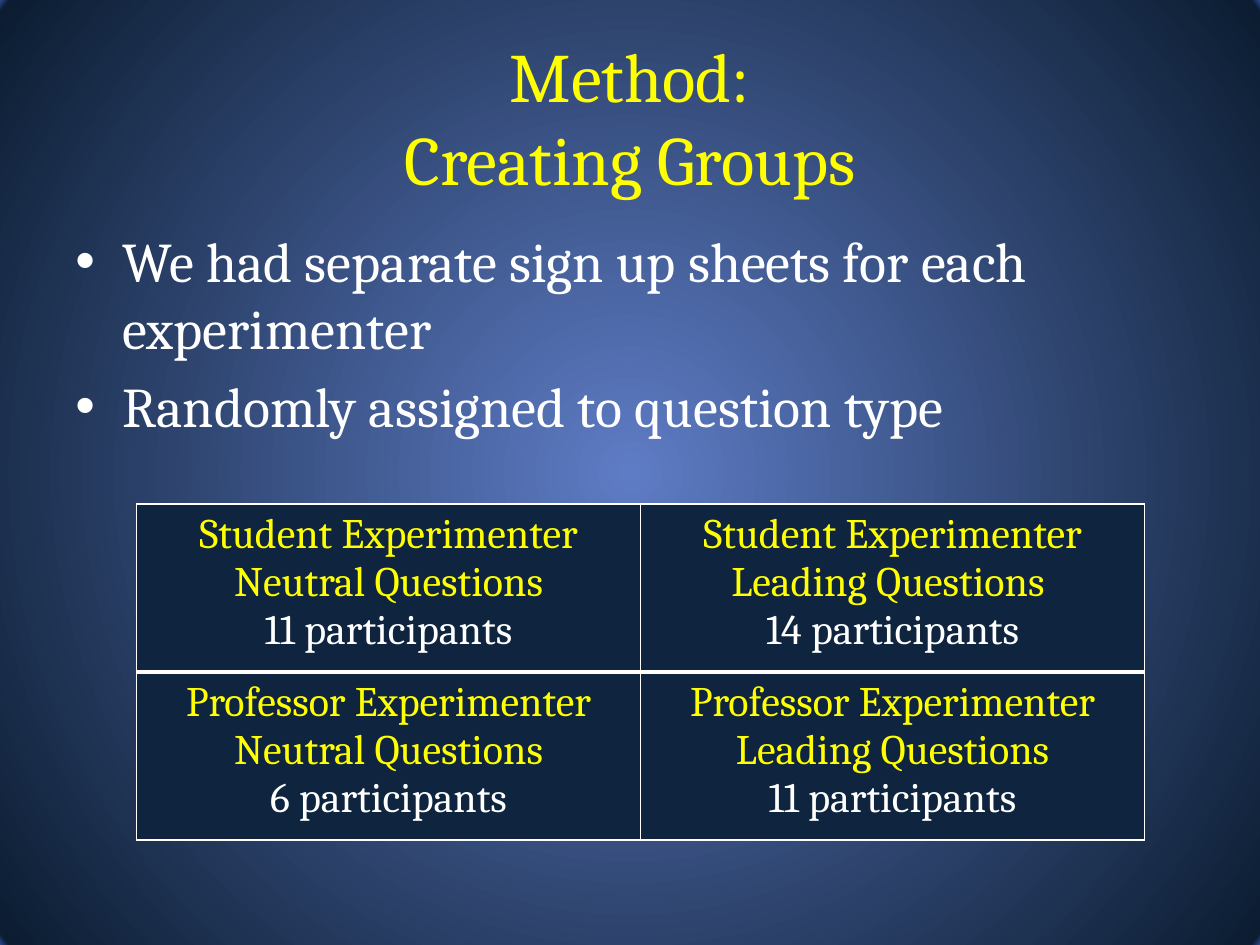
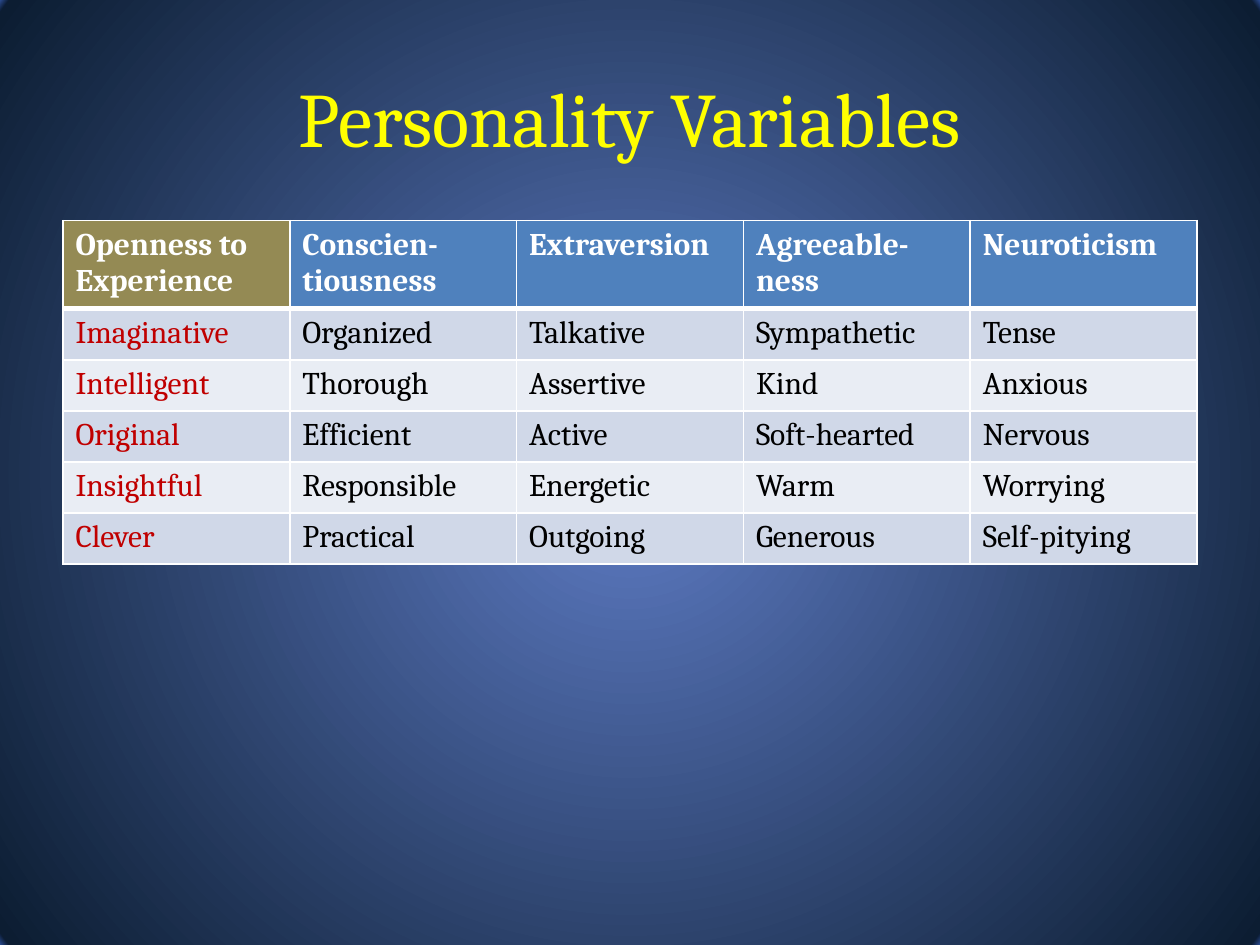
from pptx import Presentation, oxml
from pptx.dml.color import RGBColor
from pptx.enum import text
from pptx.oxml import ns
from pptx.util import Pt

FONT = "Cambria"
COLORS = {
    "title": "FFFF00", "white": "FFFFFF", "black": "000000",
    "glow": "5E7CC5", "night": "0C1D32", "rim": "2E5095",
    "group": "0F243E", "header": "4F81BD", "openness": "948A54",
    "trait": "C00000", "band": "D0D8E8", "light band": "E9EDF4",
}
DRAWING = 'xmlns:a="http://schemas.openxmlformats.org/drawingml/2006/main"'
CENTER = text.PP_ALIGN.CENTER


def style(para, words, size, color, align=None, bold=False):
    para.text = words
    para.alignment = align
    para.font.name = FONT
    para.font.size = Pt(size)
    para.font.bold = bold
    para.font.color.rgb = RGBColor.from_string(COLORS[color])


def finish_cell(cell, row, fill):
    """Draw white borders, thick below the first row, then fill the cell."""
    properties = cell._tc.get_or_add_tcPr()
    widths = {"L": 1, "R": 1, "T": 3 if row == 1 else 1, "B": 3 if row == 0 else 1}
    for side, width in widths.items():
        properties.append(oxml.parse_xml(
            f'<a:ln{side} {DRAWING} w="{Pt(width)}"><a:solidFill>'
            f'<a:srgbClr val="{COLORS["white"]}"/></a:solidFill></a:ln{side}>'))
    cell.fill.solid()
    cell.fill.fore_color.rgb = RGBColor.from_string(COLORS[fill])


deck = Presentation()
deck.slide_width, deck.slide_height = Pt(720), Pt(540)

# Shared radial background
stops = "".join(
    f'<a:gs pos="{percent * 1000}"><a:srgbClr val="{COLORS[name]}"/></a:gs>'
    for percent, name in [(0, "glow"), (99, "night"), (100, "rim")])
background = oxml.parse_xml(
    f'<p:bg {ns.nsdecls("p")} {DRAWING}><p:bgPr><a:gradFill rotWithShape="1">'
    f'<a:gsLst>{stops}</a:gsLst><a:path path="circle">'
    '<a:fillToRect l="50000" t="50000" r="50000" b="50000"/></a:path>'
    '</a:gradFill><a:effectLst/></p:bgPr></p:bg>')
master = deck.slide_master.element.find(ns.qn("p:cSld"))
master.replace(master.find(ns.qn("p:bg")), background)

# Both slides with their titles
pages = []
for title, size in [("Method:\vCreating Groups", 39.6), ("Personality Variables", 44)]:
    page = deck.slides.add_slide(deck.slide_layouts[6])
    box = page.shapes.add_textbox(Pt(36), Pt(21.6), Pt(648), Pt(90))
    box.text_frame.word_wrap = True
    box.text_frame.vertical_anchor = text.MSO_ANCHOR.MIDDLE
    style(box.text_frame.paragraphs[0], title, size, "title", CENTER)
    pages.append(page)
method_page, personality_page = pages

# Method: bullets
frame = method_page.shapes.add_textbox(Pt(36), Pt(126), Pt(648), Pt(356.4)).text_frame
frame.word_wrap = True
bullets = ["We had separate sign up sheets for each experimenter",
           "Randomly assigned to question type"]
for index, words in enumerate(bullets):
    para = frame.add_paragraph() if index else frame.paragraphs[0]
    style(para, words, 32, "white")
    para.space_before = Pt(6)
    properties = para._p.get_or_add_pPr()
    properties.set("marL", str(Pt(27)))
    properties.set("indent", str(Pt(-27)))
    properties.append(oxml.parse_xml(f'<a:buFont {DRAWING} typeface="Arial"/>'))
    properties.append(oxml.parse_xml(f'<a:buChar {DRAWING} char="•"/>'))
    # Bullet settings come before the default run properties
    properties.append(properties.find(ns.qn("a:defRPr")))

# Method: two by two groups
groups = [
    [("Student Experimenter", "Neutral Questions", "11 participants"),
     ("Student Experimenter", "Leading Questions ", "14 participants")],
    [("Professor Experimenter", "Neutral Questions", "6 participants"),
     ("Professor Experimenter", "Leading Questions", "11 participants")],
]
table = method_page.shapes.add_table(2, 2, Pt(78), Pt(288), Pt(576), Pt(192)).table
for row, group_row in enumerate(groups):
    for column, lines in enumerate(group_row):
        cell = table.cell(row, column)
        cell.text = "\n".join(lines)
        for para, line, color in zip(cell.text_frame.paragraphs, lines,
                                     ("title", "title", "white")):
            style(para, line, 24, color, CENTER)
        finish_cell(cell, row, "group")

# Personality: one column of traits per variable
variables = [
    ("Openness to Experience", "Imaginative", "Intelligent", "Original",
     "Insightful", "Clever"),
    ("Conscien-tiousness", "Organized", "Thorough", "Efficient",
     "Responsible", "Practical"),
    ("Extraversion", "Talkative", "Assertive", "Active", "Energetic", "Outgoing"),
    ("Agreeable-ness", "Sympathetic", "Kind", "Soft-hearted", "Warm", "Generous"),
    ("Neuroticism", "Tense", "Anxious", "Nervous", "Worrying", "Self-pitying"),
]
table = personality_page.shapes.add_table(
    6, 5, Pt(36), Pt(126), Pt(648), Pt(194.4)).table
for row in range(6):
    table.rows[row].height = Pt(29.2 if row else 48.4)
for column, traits in enumerate(variables):
    for row, words in enumerate(traits):
        if row == 0:
            color, fill = "white", "header" if column else "openness"
        else:
            color = "black" if column else "trait"
            fill = "band" if row % 2 else "light band"
        cell = table.cell(row, column)
        style(cell.text_frame.paragraphs[0], words, 18, color, bold=row == 0)
        finish_cell(cell, row, fill)

deck.save("out.pptx")
